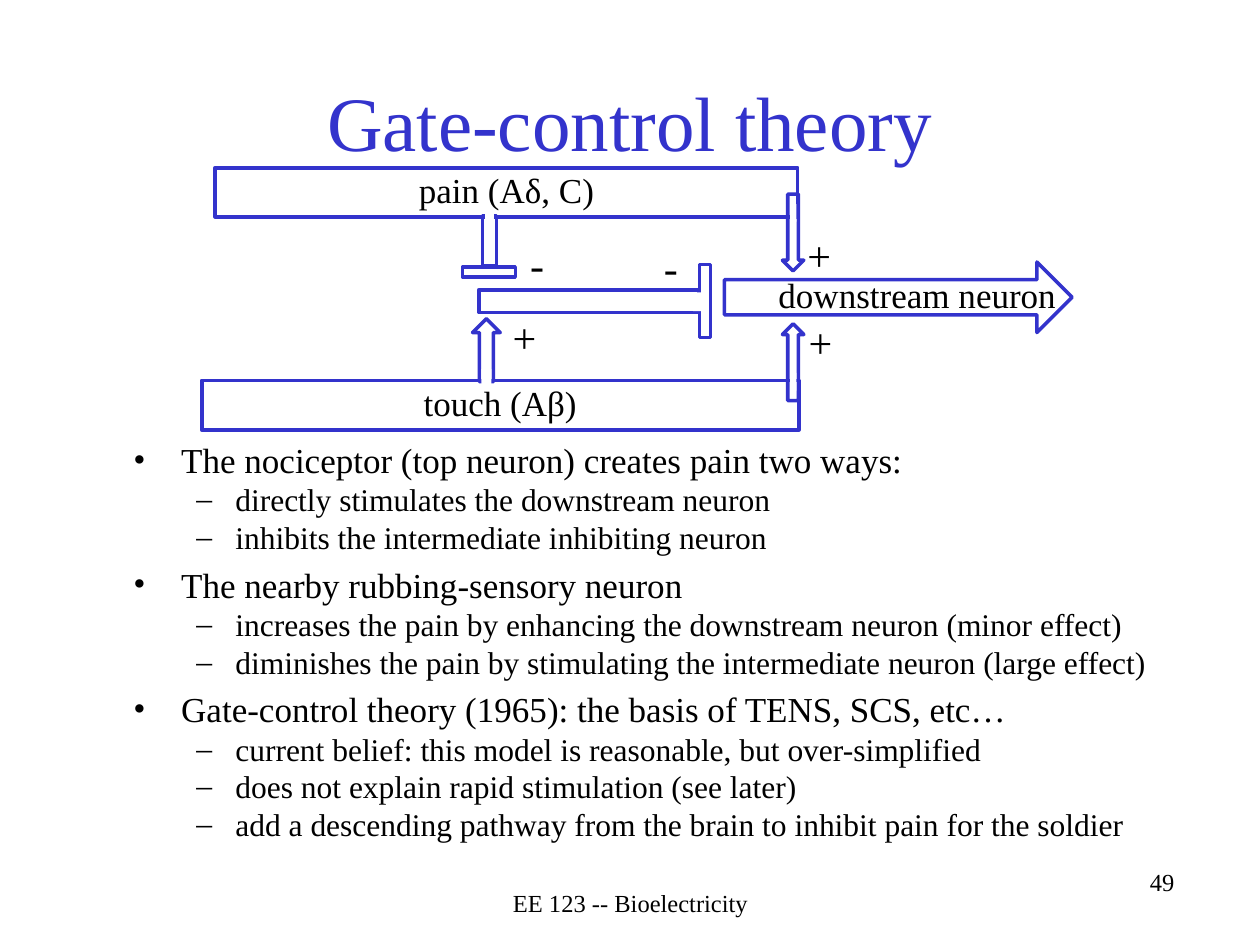
from lxml import etree
from pptx import Presentation
from pptx.dml.color import RGBColor
from pptx.enum.shapes import MSO_SHAPE
from pptx.enum.text import MSO_ANCHOR, PP_ALIGN
from pptx.oxml.ns import qn
from pptx.util import Inches, Pt

RECT = MSO_SHAPE.RECTANGLE
UP, DOWN, RIGHT = MSO_SHAPE.UP_ARROW, MSO_SHAPE.DOWN_ARROW, MSO_SHAPE.RIGHT_ARROW
LEFT, MID, END = PP_ALIGN.LEFT, PP_ALIGN.CENTER, PP_ALIGN.RIGHT
MIDDLE = MSO_ANCHOR.MIDDLE

FONT = "Times New Roman"
COLORS = {"blue": "3333CC", "black": "000000", "white": "FFFFFF"}

POINTS = [
    ("The nociceptor (top neuron) creates pain two ways:", [
        "directly stimulates the downstream neuron",
        "inhibits the intermediate inhibiting neuron"]),
    ("The nearby rubbing-sensory neuron", [
        "increases the pain by enhancing the downstream neuron (minor effect)",
        "diminishes the pain by stimulating the intermediate neuron (large effect)"]),
    ("Gate-control theory (1965): the basis of TENS, SCS, etc…", [
        "current belief: this model is reasonable, but over-simplified",
        "does not explain rapid stimulation (see later)",
        "add a descending pathway from the brain to inhibit pain for the soldier"]),
]


def color(name):
    return RGBColor.from_string(COLORS[name])


def write(para, text, size, align=LEFT, tint="black"):
    para.text = text
    para.alignment = align
    font = para.runs[0].font
    font.name, font.size = FONT, Pt(size)
    font.color.rgb = color(tint)


def add_box(slide, box):
    frame = slide.shapes.add_textbox(*map(Inches, box)).text_frame
    frame.word_wrap = True
    return frame


def add_text(slide, box, text, size, align=LEFT, tint="black"):
    frame = add_box(slide, box)
    write(frame.paragraphs[0], text, size, align, tint)
    return frame


def add_shape(slide, kind, box, width=2):
    shape = slide.shapes.add_shape(kind, *map(Inches, box))
    shape.shadow.inherit = False
    shape.fill.background()
    shape.line.color.rgb = color("blue")
    shape.line.width = Pt(width)
    return shape


def add_neuron(slide, box, text):
    frame = add_shape(slide, RECT, box, 2.25).text_frame
    frame.margin_left = frame.margin_right = frame.margin_top = 0
    frame.margin_bottom = Inches(0.05)
    frame.word_wrap = False
    frame.vertical_anchor = MIDDLE
    write(frame.paragraphs[0], text, 20, MID)


def add_mask(slide, box):
    shape = add_shape(slide, RECT, box)
    shape.fill.solid()
    shape.fill.fore_color.rgb = color("white")
    shape.line.fill.background()


def add_point(para, text, level):
    size, mark, left, hang, gap = [
        (20, "•", 0.38, 0.38, 4), (18, "–", 0.81, 0.31, 0)][level]
    write(para, text, size)
    para.level = level
    para.space_before = Pt(gap)
    props = para._p.get_or_add_pPr()
    props.set("marL", str(Inches(left)))
    props.set("indent", str(-Inches(hang)))
    etree.SubElement(props, qn("a:buFont")).set("typeface", FONT)
    etree.SubElement(props, qn("a:buChar")).set("char", mark)


def add_list(slide, box):
    frame = add_box(slide, box)
    lines = [(text, level) for head, subs in POINTS
             for text, level in [(head, 0)] + [(sub, 1) for sub in subs]]
    for i, (text, level) in enumerate(lines):
        para = frame.add_paragraph() if i else frame.paragraphs[0]
        add_point(para, text, level)


def add_circuit(slide):
    add_shape(slide, RIGHT, (5.75, 2.08, 2.76, 0.56))
    add_text(slide, (6.08, 2.12, 2.42, 0.44), "downstream neuron", 20)
    for box in [(5.55, 2.1, 0.09, 0.58), (3.8, 2.3, 1.75, 0.18)]:
        add_shape(slide, RECT, box)
    add_neuron(slide, (1.71, 1.33, 4.62, 0.39), "pain (Aδ, C)")
    add_neuron(slide, (1.6, 3.02, 4.74, 0.39), "touch (Aβ)")
    for kind, box in [
            (RECT, (3.83, 1.71, 0.11, 0.4)), (RECT, (3.67, 2.12, 0.42, 0.08)),
            (UP, (6.21, 2.57, 0.17, 0.61)), (UP, (3.75, 2.53, 0.22, 0.5)),
            (DOWN, (6.21, 1.54, 0.17, 0.61))]:
        add_shape(slide, kind, box)
    for box in [
            (3.85, 1.67, 0.07, 0.14), (3.82, 2.93, 0.08, 0.14),
            (5.5, 2.32, 0.08, 0.15), (6.27, 1.62, 0.05, 0.14),
            (6.27, 2.96, 0.05, 0.14)]:
        add_mask(slide, box)
    for sign, left, top in [("+", 6.31, 1.77), ("+", 6.32, 2.46),
                            ("+", 3.97, 2.42), ("-", 4.11, 1.84),
                            ("-", 5.17, 1.87)]:
        add_text(slide, (left, top, 0.42, 0.5), sign, 24)


def main():
    deck = Presentation()
    deck.slide_width, deck.slide_height = Inches(10), Inches(7.5)
    slide = deck.slides.add_slide(deck.slide_layouts[6])
    add_text(slide, (6.25, 6.83, 3.17, 0.5), "49", 14, END)
    title = add_text(slide, (0.75, 0.33, 8.5, 1.25),
                     "Gate-control theory", 44, MID, "blue")
    title.vertical_anchor = MIDDLE
    add_list(slide, (0.96, 3.43, 8.29, 3.42))
    add_text(slide, (3.42, 7, 3.17, 0.33), "EE 123 -- Bioelectricity", 14, MID)
    add_circuit(slide)
    deck.save("out.pptx")


if __name__ == "__main__":
    main()
